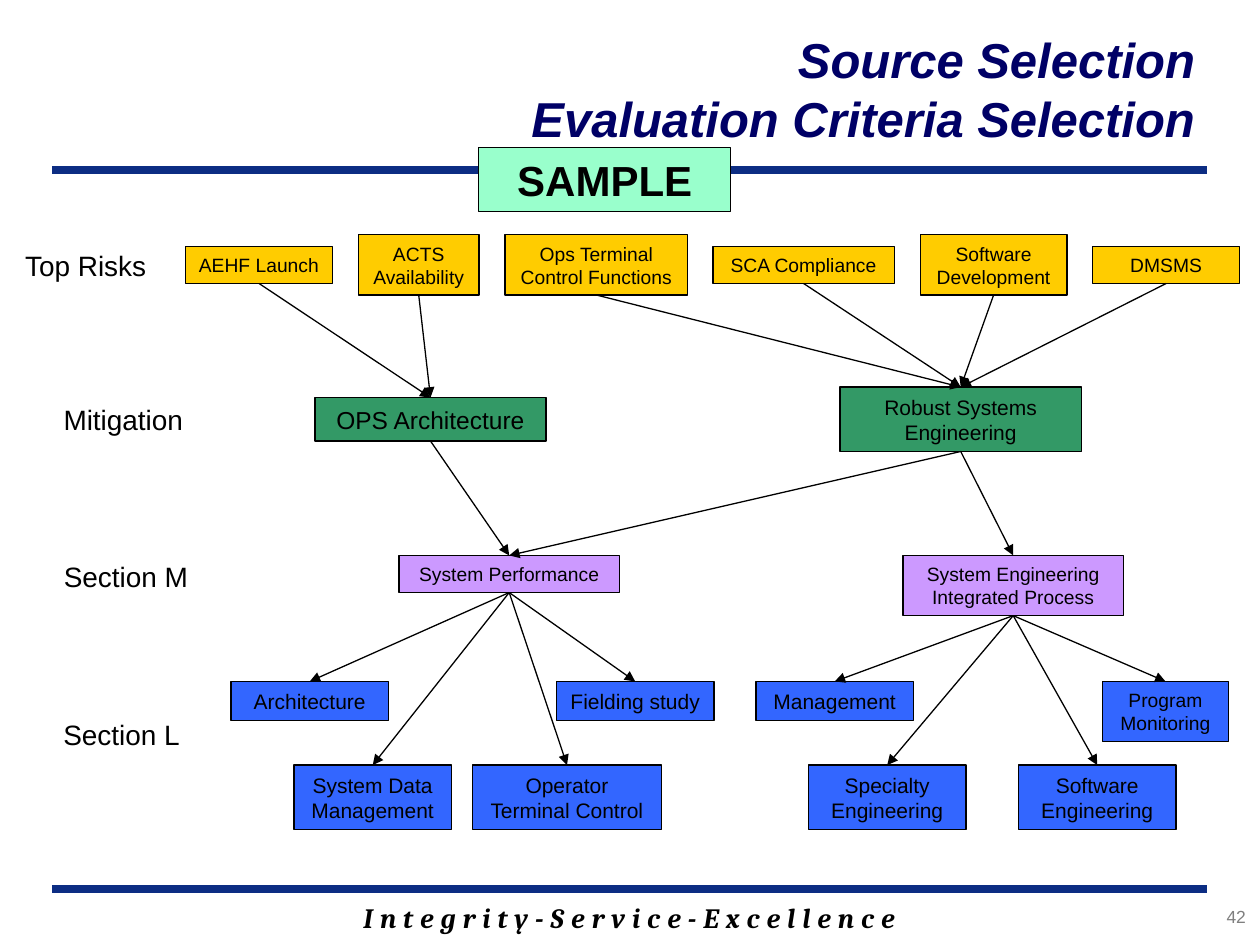
from pptx import Presentation
from pptx.dml.color import RGBColor
from pptx.enum.shapes import MSO_CONNECTOR, MSO_SHAPE
from pptx.enum.text import MSO_ANCHOR, MSO_AUTO_SIZE, PP_ALIGN
from pptx.oxml.ns import qn
from pptx.util import Pt
from lxml.etree import SubElement

COLORS = {
    "rule": "0C2D83", "title": "000066", "text": "000000", "number": "7F7F7F",
    "sample": "99FFCC", "risk": "FFCC00", "mitigation": "339966",
    "section_m": "CC99FF", "section_l": "3366FF",
}

# Each box: text, left within the tier, width, font size, lines
RISKS = [
    ("AEHF Launch", 0, 84, 11, 1),
    ("ACTS Availability", 98.8, 69, 11, 2),
    ("Ops Terminal\nControl Functions", 182.6, 104.4, 11, 2),
    ("SCA Compliance", 301.4, 103.6, 11, 1),
    ("Software Development", 419.8, 84, 11, 2),
    ("DMSMS", 518.4, 84, 11, 1),
]
MITIGATIONS = [
    ("OPS Architecture", 74, 132, 14, 1),
    ("Robust Systems Engineering", 374, 138, 12, 2),
]
SECTION_M = [
    ("System Performance", 122, 126, 11, 1),
    ("System Engineering Integrated Process", 410, 126, 11, 2),
]
SECTION_L_UPPER = [
    ("Architecture", 26, 90, 12, 1),
    ("Fielding study", 212, 90, 12, 1),
    ("Management", 326, 90, 12, 1),
    ("Program Monitoring", 524, 72, 11, 2),
]
SECTION_L_LOWER = [
    ("System Data Management", 62, 90, 12, 2),
    ("Operator Terminal Control", 164, 108, 12, 2),
    ("Specialty Engineering", 356, 90, 12, 2),
    ("Software Engineering", 476, 90, 12, 2),
]
LINKS = {
    "OPS Architecture": ["System Performance"],
    "Robust Systems Engineering": ["System Performance",
                                   "System Engineering Integrated Process"],
    "System Performance": ["Architecture", "Fielding study",
                           "System Data Management", "Operator Terminal Control"],
    "System Engineering Integrated Process": ["Management", "Program Monitoring",
                                              "Specialty Engineering",
                                              "Software Engineering"],
}
for index, risk in enumerate(RISKS):
    LINKS[risk[0]] = [MITIGATIONS[0 if index < 2 else 1][0]]


def rgb(name):
    return RGBColor.from_string(COLORS[name])


def write(tf, text, size, color="text", align=PP_ALIGN.CENTER,
          font="Arial", bold=False, italic=False):
    tf.text = text
    for p in tf.paragraphs:
        p.alignment = align
        p.font.name, p.font.size = font, Pt(size)
        p.font.bold, p.font.italic = bold, italic
        p.font.color.rgb = rgb(color)


def add_text(s, box, text, size, wrap=True, **style):
    tf = s.shapes.add_textbox(*map(Pt, box)).text_frame
    tf.word_wrap = wrap
    write(tf, text, size, **style)
    return tf


def add_box(s, box, text, size, fill, bold=False):
    sp = s.shapes.add_shape(MSO_SHAPE.RECTANGLE, *map(Pt, box))
    sp.shadow.inherit = False
    sp.fill.solid()
    sp.fill.fore_color.rgb = rgb(fill)
    sp.line.color.rgb = rgb("text")
    sp.line.width = Pt(0.75)
    sp.text_frame.word_wrap = True
    sp.text_frame.vertical_anchor = MSO_ANCHOR.MIDDLE
    write(sp.text_frame, text, size, bold=bold)
    return sp


def add_line(s, start, end, color="text", width=0.75):
    line = s.shapes.add_connector(MSO_CONNECTOR.STRAIGHT, *map(Pt, start + end))
    line.line.color.rgb = rgb(color)
    line.line.width = Pt(width)
    SubElement(line._element.spPr, qn("a:effectLst"))
    return line


def add_header(s, box):
    x, y, w, h = box
    title = s.shapes.title
    title.left, title.top, title.width, title.height = map(
        Pt, (x + w - 398, y, 398, 75))
    tf = title.text_frame
    tf.auto_size = MSO_AUTO_SIZE.NONE
    tf.vertical_anchor = MSO_ANCHOR.MIDDLE
    write(tf, "Source Selection\nEvaluation Criteria Selection", 28, "title",
          PP_ALIGN.RIGHT, bold=True, italic=True)
    add_line(s, (x, y + 84.2), (x + w, y + 84.2), "rule", 4.5)
    add_box(s, (x + 243.6, y + h - 36.5, 144, 36.5), "SAMPLE", 24, "sample", True)


def add_footer(s, box):
    x, y, w, h = box
    add_line(s, (x, y), (x + w, y), "rule", 4.5)
    tf = add_text(s, (x + 72, y + 3, w - 144, h),
                  "I n t e g r i t y - S e r v i c e - E x c e l l e n c e", 16,
                  font="Cambria", bold=True, italic=True)
    tf.paragraphs[0].runs[0]._r.get_or_add_rPr().set("spc", "25")
    add_text(s, (x + w - 61, y + 6, 90, 24), "42", 10,
             color="number", align=PP_ALIGN.RIGHT)


def add_tier(s, box, boxes, fill, align=0):
    """Place a row of boxes; align 0 sets them at the top, 0.5 in the middle."""
    x, y, w, h = box
    placed = {}
    for text, left, width, size, lines in boxes:
        height = 8 + 1.2 * size * lines
        top = y + (h - height) * align
        placed[text] = add_box(s, (x + left, top, width, height), text, size, fill)
    return placed


def add_arrow(s, source, target):
    line = add_line(s, (0, 0), (0, 0))
    line.begin_connect(source, 2)
    line.end_connect(target, 0)
    SubElement(line.line._get_or_add_ln(), qn("a:tailEnd"), type="triangle")


def add_criteria_tree(s, box):
    x, y, w, h = box
    for text, left, top, width in [("Top Risks", 0, 4, 86), ("Mitigation", 23, 92, 83),
                                   ("Section M", 23, 182, 86), ("Section L", 23, 272, 81)]:
        add_text(s, (x + left, y + top, width, 27), text, 16, wrap=False)
    nodes = {}
    for boxes, fill, top, height, align in [
        (RISKS, "risk", 0, 34.4, 0.5),
        (MITIGATIONS, "mitigation", 87, 36.8, 0.5),
        (SECTION_M, "section_m", 183.2, 34.4, 0),
        (SECTION_L_UPPER, "section_l", 255.2, 34.4, 0),
        (SECTION_L_LOWER, "section_l", 303, 36.8, 0),
    ]:
        nodes.update(add_tier(s, (x + 100, y + top, w - 100, height), boxes, fill, align))
    for source, targets in LINKS.items():
        for target in targets:
            add_arrow(s, nodes[source], nodes[target])


def main():
    prs = Presentation()
    prs.slide_width, prs.slide_height = Pt(720), Pt(540)
    s = prs.slides.add_slide(prs.slide_layouts[5])
    add_header(s, (30, 13, 660, 108))
    add_criteria_tree(s, (6, 134.2, 702, 340))
    add_footer(s, (30, 508, 660, 27))
    prs.save("out.pptx")


if __name__ == "__main__":
    main()
